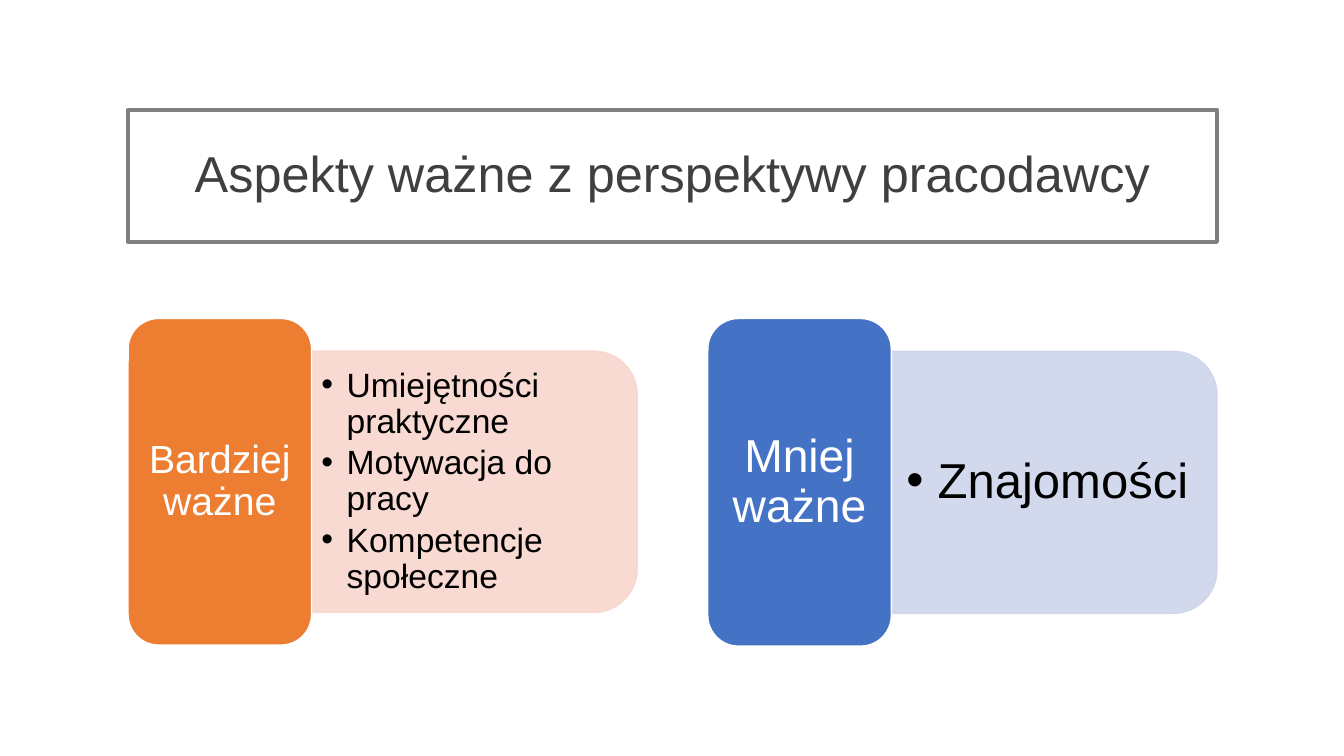
from lxml.etree import SubElement
from pptx import Presentation
from pptx.dml.color import RGBColor
from pptx.enum.shapes import MSO_SHAPE as Kind
from pptx.enum.text import MSO_ANCHOR as Anchor, PP_ALIGN as Align
from pptx.oxml.ns import qn
from pptx.util import Inches, Pt

WHITE = RGBColor(0xFF, 0xFF, 0xFF)
BLACK = RGBColor(0x00, 0x00, 0x00)
GREY = RGBColor(0x7F, 0x7F, 0x7F)
DARK = RGBColor(0x3F, 0x3F, 0x3F)
ORANGE = RGBColor(0xED, 0x7D, 0x31)
PEACH = RGBColor(0xF8, 0xD7, 0xCE)
BLUE = RGBColor(0x44, 0x72, 0xC4)
PALE = RGBColor(0xCF, 0xD5, 0xEA)

TOP, TAB, SIDE = 3.16, 1.82, 3.23
GAP = 0.09


def add_box(shapes, kind, area, fill, edge, width):
    box = shapes.add_shape(kind, *map(Inches, area))
    box.shadow.inherit = False
    box.fill.solid()
    box.fill.fore_color.rgb = fill
    box.line.color.rgb = edge
    box.line.width = Pt(width)
    return box


def put_text(box, lines, size, color, align, pad=0.1, hang=0):
    """Fill a box with centred-height text; a hang above zero adds bullets."""
    frame = box.text_frame
    look = {"word_wrap": True, "vertical_anchor": Anchor.MIDDLE,
            "margin_left": Inches(pad), "margin_right": Inches(pad),
            "margin_top": Inches(pad / 2), "margin_bottom": Inches(pad / 2)}
    for name, value in look.items():
        setattr(frame, name, value)
    for num, line in enumerate(lines):
        para = frame.add_paragraph() if num else frame.paragraphs[0]
        para.alignment = align
        para.line_spacing = 0.9
        run = para.add_run()
        run.text = line
        for name, value in {"name": "Arial", "size": Pt(size)}.items():
            setattr(run.font, name, value)
        run.font.color.rgb = color
        if hang:
            para.level = 1
            para.space_after = Pt(round(size * 0.15, 1))
            props = para._p.get_or_add_pPr()
            props.set("marL", str(Inches(hang)))
            props.set("indent", str(-Inches(hang)))
            SubElement(props, qn("a:buFont"), typeface="Arial")
            SubElement(props, qn("a:buChar"), char="•")


deck = Presentation()
deck.slide_width, deck.slide_height = Inches(13.33), Inches(7.5)
slide = deck.slides.add_slide(deck.slide_layouts[6])

title = add_box(slide.shapes, Kind.RECTANGLE, (1.27, 1.09, 10.8, 1.31), WHITE, GREY, 3)
put_text(title, ["Aspekty ważne z perspektywy pracodawcy"], 36, DARK, Align.CENTER)

# left, height, tab colour, panel colour, (label, size, pad), (items, size, pad, hang)
cards = [
    (1.27, 3.24, ORANGE, PEACH, ("Bardziej ważne", 28, 0.11),
     (["Umiejętności praktyczne", "Motywacja do pracy", "Kompetencje społeczne"],
      24, 0.1, 0.25)),
    (7.02, 3.25, BLUE, PALE, ("Mniej ważne", 33, 0.14),
     (["Znajomości"], 35, 0.15, 0.31)),
]
for left, tall, strong, soft, (label, big, inset), (items, size, pad, hang) in cards:
    card = slide.shapes.add_group_shape().shapes
    mid = TOP + tall / 2
    deep = tall * 0.8
    edge = left + TAB

    # The panel is turned a quarter, so its width and height swap.
    area = (edge + (SIDE - deep) / 2, mid - SIDE / 2, deep, SIDE)
    panel = add_box(card, Kind.ROUND_2_SAME_RECTANGLE, area, soft, soft, 1)
    panel.rotation = 90
    for tint in panel._element.spPr.iter(qn("a:srgbClr")):
        SubElement(tint, qn("a:alpha"), val="90000")

    high = deep - 0.25
    area = (edge, mid - high / 2, 3.1, high)
    points = card.add_textbox(*map(Inches, area))
    put_text(points, items, size, BLACK, Align.LEFT, pad, hang)

    add_box(card, Kind.ROUNDED_RECTANGLE, (left, TOP, TAB, tall), strong, WHITE, 1)
    area = (left + GAP, TOP + GAP, TAB - 2 * GAP, tall - 2 * GAP)
    name = card.add_textbox(*map(Inches, area))
    put_text(name, [label], big, WHITE, Align.CENTER, inset)

deck.save("out.pptx")
